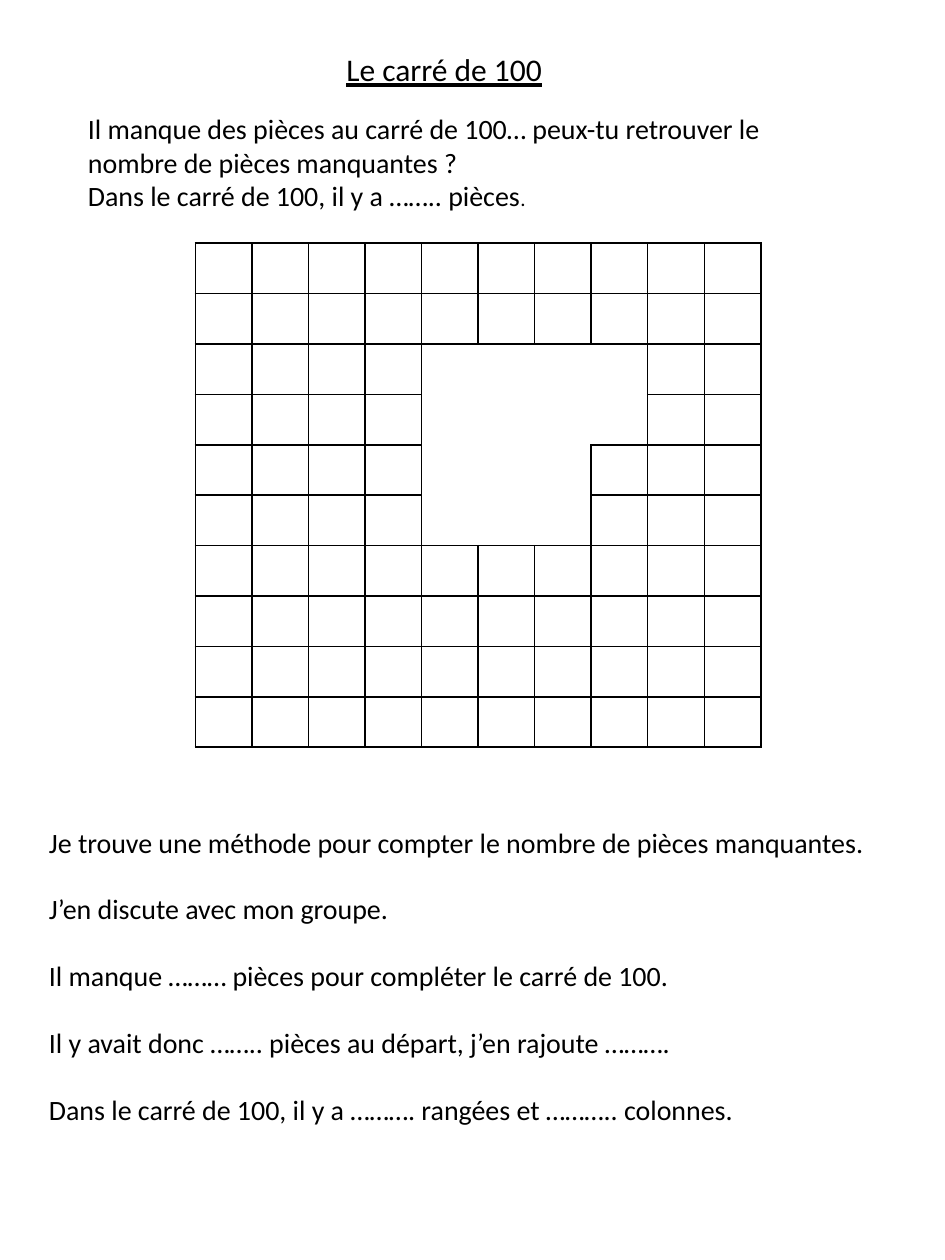
from lxml import etree
from pptx import Presentation
from pptx import util as u
from pptx.dml.color import RGBColor
from pptx.enum import text as t
from pptx.oxml import ns

COLORS = {"ink": "000000"}
FONT = "Calibri"
SIZE = 10
MISSING = {(row, col) for row in range(2, 6) for col in range(4, 8 if row < 4 else 7)}
SIDES = {"lnL": (0, -1), "lnR": (0, 1), "lnT": (-1, 0), "lnB": (1, 0)}


def add_text(slide, box, paragraphs, size=16, underline=None, wrap=True,
             anchor=t.MSO_ANCHOR.TOP, gap=0):
    """Each paragraph is a list of (wording, size) runs or a plain string."""
    frame = slide.shapes.add_textbox(*map(u.Inches, box)).text_frame
    frame.word_wrap = wrap
    frame.vertical_anchor = anchor
    for index, wording in enumerate(paragraphs):
        paragraph = frame.add_paragraph() if index else frame.paragraphs[0]
        paragraph.space_before = u.Pt(gap if index else 0)
        runs = [(wording, size)] if isinstance(wording, str) else wording
        for words, points in runs:
            run = paragraph.add_run()
            run.text = words
            run.font.name = FONT
            run.font.size = u.Pt(points)
            run.font.underline = underline
            run.font.color.rgb = RGBColor.from_string(COLORS["ink"])


def set_border(cell, side, visible):
    properties = cell._tc.get_or_add_tcPr()
    line = etree.SubElement(properties, ns.qn("a:" + side), w=str(u.Pt(1)))
    if visible:
        fill = etree.SubElement(line, ns.qn("a:solidFill"))
        etree.SubElement(fill, ns.qn("a:srgbClr"), val=COLORS["ink"])
    else:
        etree.SubElement(line, ns.qn("a:noFill"))


def add_heading(slide, box):
    left, top, width, height = box
    add_text(slide, (left + 2.05, top, 1.78, 0.4), ["Le carré de 100"],
             size=18, underline=True, wrap=False)
    add_text(slide, (left, top + 0.48, width, height - 0.48), [
        "Il manque des pièces au carré de 100… peux-tu retrouver le "
        "nombre de pièces manquantes\u00a0?",
        [("Dans le carré de 100, il y a …….. pièces", 16), (".", 12)],
    ], anchor=t.MSO_ANCHOR.MIDDLE)


def add_square(slide, box):
    """Draw the square of 100, with no lines inside the missing piece."""
    left, top, width, height = map(u.Inches, box)
    square = slide.shapes.add_table(SIZE, SIZE, left, top, width, height).table
    square.first_row = square.horz_banding = False
    for column in square.columns:
        column.width = width // SIZE
    for row in range(SIZE):
        square.rows[row].height = height // SIZE
        for col in range(SIZE):
            cell = square.cell(row, col)
            cell.margin_top = cell.margin_bottom = 0
            for side, (down, across) in SIDES.items():
                inside = {(row, col), (row + down, col + across)} <= MISSING
                set_border(cell, side, not inside)
            cell.fill.background()


def add_questions(slide, box):
    add_text(slide, box, [
        "Je trouve une méthode pour compter le nombre de pièces manquantes.",
        "J’en discute avec mon groupe.",
        "Il manque ……… pièces pour compléter le carré de 100.",
        "Il y avait donc …….. pièces au départ, j’en rajoute ……….",
        "Dans le carré de 100, il y a ………. rangées et ……….. colonnes.",
    ], gap=19)


def main():
    deck = Presentation()
    deck.slide_width, deck.slide_height = u.Inches(7.5), u.Inches(10)
    slide = deck.slides.add_slide(deck.slide_layouts[6])
    add_heading(slide, (0.6, 0.35, 6, 1.39))
    add_square(slide, (1.55, 1.93, 4.49, 4))
    add_questions(slide, (0.29, 6.5, 6.85, 3.1))
    deck.save("out.pptx")


if __name__ == "__main__":
    main()
